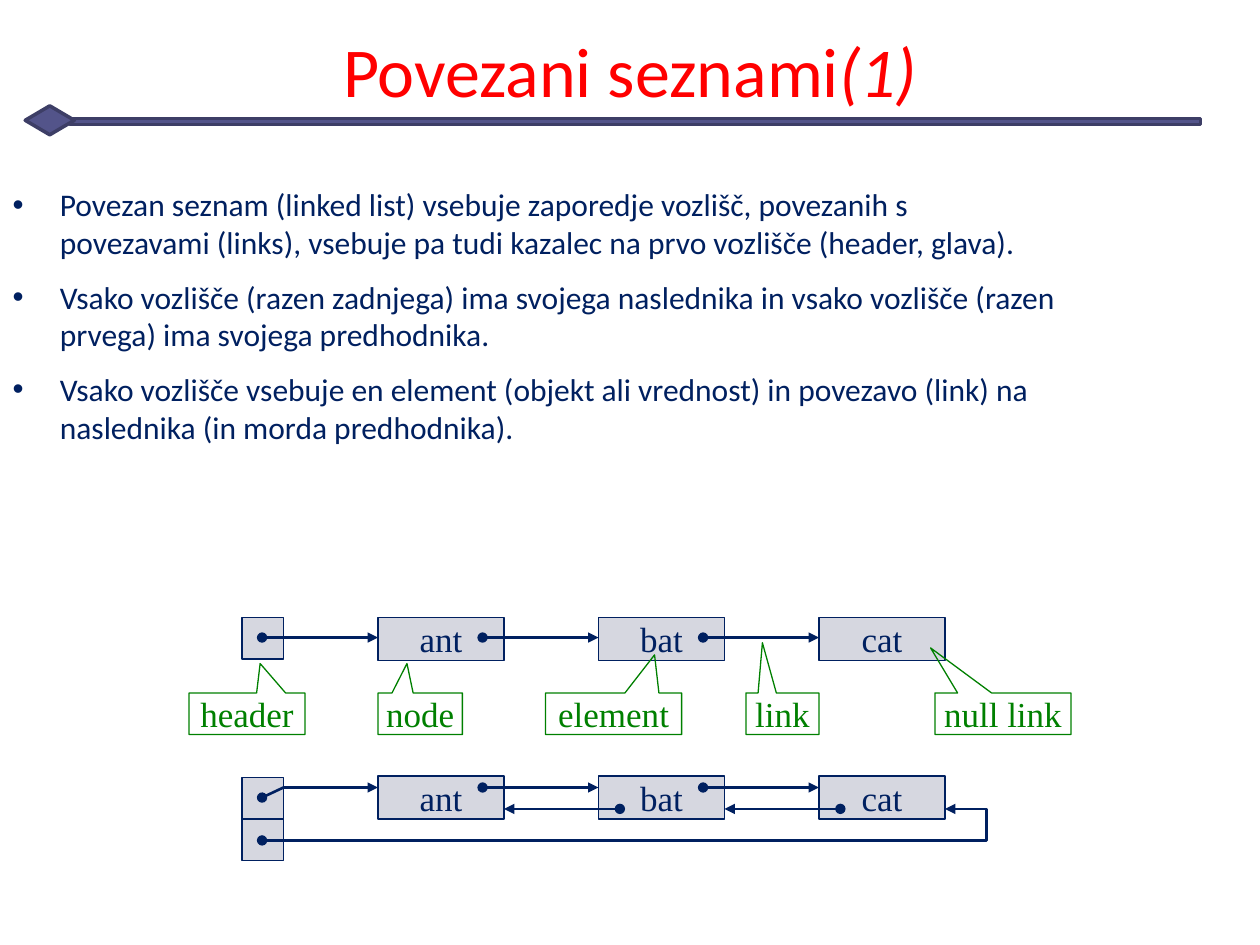
from typing import NamedTuple

from lxml.etree import SubElement
from pptx import Presentation
from pptx.dml.color import RGBColor
from pptx.enum.shapes import MSO_CONNECTOR, MSO_SHAPE
from pptx.enum.text import MSO_ANCHOR, MSO_AUTO_SIZE, PP_ALIGN
from pptx.oxml.ns import qn
from pptx.util import Inches, Pt

RED = RGBColor(0xFF, 0x00, 0x00)
NAVY = RGBColor(0x00, 0x20, 0x60)
GREEN = RGBColor(0x00, 0x80, 0x00)
PALE = RGBColor(0xD6, 0xD7, 0xE0)
PURPLE = RGBColor(0x53, 0x54, 0x8A)
DARK_PURPLE = RGBColor(0x3D, 0x3E, 0x66)

BULLETS = (
    "Povezan seznam (linked list) vsebuje zaporedje vozlišč, povezanih s povezavami (links), "
    "vsebuje pa tudi kazalec na prvo vozlišče (header, glava).",
    "Vsako vozlišče (razen zadnjega) ima svojega naslednika in vsako vozlišče (razen prvega) "
    "ima svojega predhodnika.",
    "Vsako vozlišče vsebuje en element (objekt ali vrednost) in povezavo (link) na naslednika "
    "(in morda predhodnika).",
)
NODES = ("ant", "bat", "cat")
NODE_LEFT, NODE_STEP, NODE_WIDTH, NODE_HEIGHT = 3, 1.75, 1, 0.34
NEXT_OFFSET, PREVIOUS_OFFSET = 0.83, 0.17
HEADER_LEFT, HEADER_SIZE, HEADER_DOT = 1.92, 0.33, 2.08


class Box(NamedTuple):
    left: float
    top: float
    width: float
    height: float


class Callout(NamedTuple):
    text: str
    left: float
    width: float
    tip_x: float
    tip_y: float


CALLOUTS = (
    Callout("header", 1.5, 0.92, 0.114, -1.208),
    Callout("node", 3, 0.67, -0.156, -1.208),
    Callout("null link", 7.42, 1.08, -0.532, -1.583),
    Callout("element", 4.33, 1.08, 0.301, -1.417),
    Callout("link", 5.92, 0.58, -0.274, -1.708),
)


def place(shape, box: Box) -> None:
    shape.left, shape.top, shape.width, shape.height = map(Inches, box)


def add_box(slide, kind, box: Box, fill: RGBColor | None, line: RGBColor, weight: float = 0.75):
    shape = slide.shapes.add_shape(kind, *map(Inches, box))
    shape.shadow.inherit = False
    if fill is None:
        shape.fill.background()
    else:
        shape.fill.solid()
        shape.fill.fore_color.rgb = fill
    shape.line.color.rgb = line
    shape.line.width = Pt(weight)
    return shape


def write_label(shape, text: str, color: RGBColor, side_margin: float = 0) -> None:
    frame = shape.text_frame
    frame.margin_left = frame.margin_right = Inches(side_margin)
    frame.margin_top = frame.margin_bottom = 0
    frame.vertical_anchor = MSO_ANCHOR.TOP
    frame.text = text
    paragraph = frame.paragraphs[0]
    paragraph.alignment = PP_ALIGN.CENTER
    paragraph.font.name = "Times New Roman"
    paragraph.font.size = Pt(20)
    paragraph.font.color.rgb = color


def style_link(shape, arrow: bool = True) -> None:
    shape.line.color.rgb = NAVY
    shape.line.width = Pt(1.5)
    line = shape.line._get_or_add_ln()
    SubElement(line, qn("a:headEnd"), type="oval")
    if arrow:
        SubElement(line, qn("a:tailEnd"), type="triangle")


def add_link(slide, start: float, end: float, y: float) -> None:
    connector = slide.shapes.add_connector(
        MSO_CONNECTOR.STRAIGHT, Inches(start), Inches(y), Inches(end), Inches(y)
    )
    style_link(connector, arrow=start != end)
    SubElement(connector._element.spPr, qn("a:effectLst"))


def add_bent_link(slide, points: list[tuple[float, float]]) -> None:
    start, *rest = [(Inches(x), Inches(y)) for x, y in points]
    builder = slide.shapes.build_freeform(*start)
    builder.add_line_segments(rest, close=False)
    shape = builder.convert_to_shape()
    shape.fill.background()
    style_link(shape)
    shape.shadow.inherit = False


def add_header(slide, top: float) -> None:
    box = Box(HEADER_LEFT, top, HEADER_SIZE, HEADER_SIZE)
    add_box(slide, MSO_SHAPE.RECTANGLE, box, PALE, NAVY)


def add_nodes(slide, top: float, next_y: float, previous_y: float | None = None) -> None:
    lefts = [NODE_LEFT + index * NODE_STEP for index in range(len(NODES))]
    for text, left in zip(NODES, lefts):
        box = Box(left, top, NODE_WIDTH, NODE_HEIGHT)
        write_label(add_box(slide, MSO_SHAPE.RECTANGLE, box, PALE, NAVY), text, NAVY)
    for index, left in enumerate(lefts):
        start = left + NEXT_OFFSET
        end = start if index == len(lefts) - 1 else left + NODE_STEP
        add_link(slide, start, end, next_y)
        if previous_y is not None:
            start = left + PREVIOUS_OFFSET
            end = start if index == 0 else left - NODE_STEP + NODE_WIDTH
            add_link(slide, start, end, previous_y)


def add_heading(slide) -> None:
    bar, diamond = Box(0.55, 0.94, 8.98, 0.05), Box(0.2, 0.84, 0.39, 0.23)
    add_box(slide, MSO_SHAPE.RECTANGLE, bar, PURPLE, DARK_PURPLE, 2)
    add_box(slide, MSO_SHAPE.FLOWCHART_DECISION, diamond, PURPLE, DARK_PURPLE, 2)
    title = slide.shapes.title
    place(title, Box(0.5, 0.16, 9, 0.78))
    title.text_frame.auto_size = MSO_AUTO_SIZE.NONE
    paragraph = title.text_frame.paragraphs[0]
    paragraph.alignment = PP_ALIGN.CENTER
    paragraph.font.name = "Calibri"
    paragraph.font.size = Pt(40)
    paragraph.font.color.rgb = RED
    paragraph.add_run().text = "Povezani seznami"
    number = paragraph.add_run()
    number.text = "(1)"
    number.font.italic = True


def add_bullets(slide) -> None:
    body = slide.placeholders[1]
    place(body, Box(0, 1.42, 8.5, 5.08))
    frame = body.text_frame
    frame.auto_size = MSO_AUTO_SIZE.NONE
    frame.text = "\n".join(BULLETS)
    for paragraph in frame.paragraphs:
        paragraph.space_after = Pt(6)
        paragraph.font.name = "Calibri"
        paragraph.font.size = Pt(18)
        paragraph.font.color.rgb = NAVY


def add_callout(slide, callout: Callout) -> None:
    box = Box(callout.left, 5.5, callout.width, 0.33)
    shape = add_box(slide, MSO_SHAPE.RECTANGULAR_CALLOUT, box, None, GREEN)
    shape.adjustments[0] = callout.tip_x
    shape.adjustments[1] = callout.tip_y
    write_label(shape, callout.text, GREEN, 0.04)


def main() -> None:
    presentation = Presentation()
    presentation.slide_width, presentation.slide_height = Inches(10), Inches(7.5)
    slide = presentation.slides.add_slide(presentation.slide_layouts[1])
    add_heading(slide)
    add_bullets(slide)

    add_header(slide, 4.9)
    add_link(slide, HEADER_DOT, NODE_LEFT, 5.06)
    add_nodes(slide, 4.9, 5.06)

    for top in (6.17, 6.5):
        add_header(slide, top)
    add_nodes(slide, 6.16, 6.25, 6.42)
    add_bent_link(slide, [(HEADER_DOT, 6.33), (2.25, 6.25), (NODE_LEFT, 6.25)])
    add_bent_link(slide, [(HEADER_DOT, 6.67), (7.83, 6.67), (7.83, 6.42), (7.5, 6.42)])

    for callout in CALLOUTS:
        add_callout(slide, callout)
    presentation.save("out.pptx")


if __name__ == "__main__":
    main()
